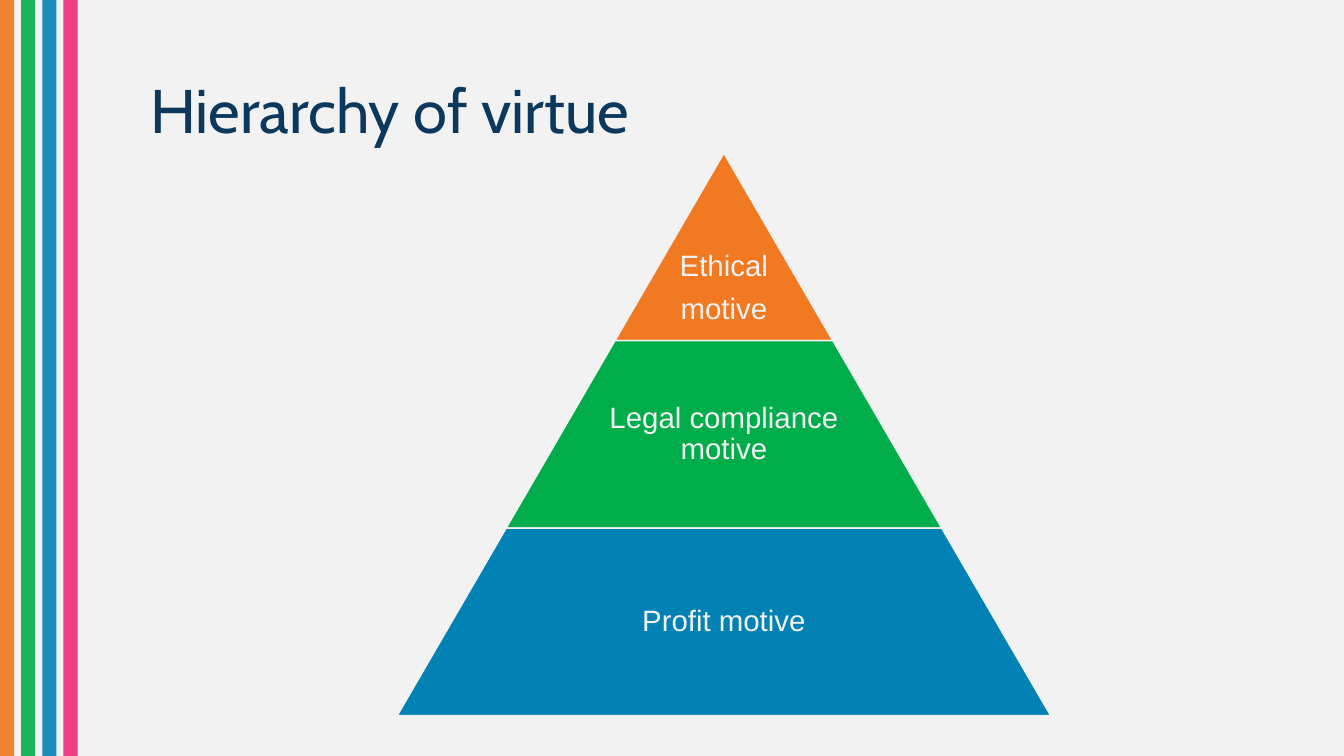
from lxml.etree import SubElement
from pptx import Presentation
from pptx.dml.color import RGBColor
from pptx.enum.shapes import MSO_SHAPE as SHAPE
from pptx.enum.text import MSO_ANCHOR as ANCHOR, MSO_AUTO_SIZE as AUTO, PP_ALIGN as ALIGN
from pptx.oxml.ns import qn
from pptx.util import Inches, Pt

TITLE = "Hierarchy of virtue"
ORANGE, GREEN, BLUE, PINK = "F07921", "01AD4B", "0281B4", "EE297B"
NAVY, PALE = "0D385E", "F2F2F2"
STRIPES = [ORANGE, GREEN, BLUE, PINK]
# paragraphs, fill, label width as share of the tier, anchor, bottom inset
TIERS = [
    (["Ethical", "motive"], ORANGE, 1, ANCHOR.BOTTOM, 0.15),
    (["Legal compliance motive"], GREEN, 0.65, ANCHOR.MIDDLE, 0.03),
    (["Profit motive"], BLUE, 0.65, ANCHOR.MIDDLE, 0.03),
]
WIDTH, HEIGHT = 13.33, 7.5
STRIPE_W, STRIPE_PITCH = 0.14, 0.21
APEX_X, APEX_Y = 7.18, 1.52
TIER_W, TIER_H = 2.16, 1.86  # each tier is one TIER_W wider than the one above
INSET = 0.03


def color(hex_string):
    return RGBColor.from_string(hex_string)


def box(x, y, w, h):
    return [Inches(v) for v in (x, y, w, h)]


def add_filled(kind, area, fill):
    s = slide.shapes.add_shape(kind, *area)
    s.shadow.inherit = False
    s.fill.solid()
    s.fill.fore_color.rgb = color(fill)
    return s


def add_stripe(i, fill):
    s = add_filled(SHAPE.RECTANGLE, box(i * STRIPE_PITCH, 0, STRIPE_W, HEIGHT), fill)
    s.line.fill.background()
    rgb = s.fill._xPr.find(".//" + qn("a:srgbClr"))
    SubElement(rgb, qn("a:alpha"), val="90000")


def add_tier(i, lines, fill, share, anchor, bottom):
    w, y = TIER_W * (i + 1), APEX_Y + TIER_H * i
    s = add_filled(SHAPE.TRAPEZOID, box(APEX_X - w / 2, y, w, TIER_H), fill)
    s.adjustments[0] = TIER_W / 2 / TIER_H
    s.line.color.rgb = color(PALE)
    s.line.width = Pt(1)

    label_w = w * share
    label = slide.shapes.add_textbox(*box(APEX_X - label_w / 2, y, label_w, TIER_H))
    tf = label.text_frame
    tf.word_wrap = True
    tf.vertical_anchor = anchor
    tf.margin_left = tf.margin_right = tf.margin_top = Inches(INSET)
    tf.margin_bottom = Inches(bottom)
    tf.text = "\n".join(lines)
    for p in tf.paragraphs:
        p.alignment = ALIGN.CENTER
        p.line_spacing = 0.9
        p.space_after = Pt(8)
        style(p, "Arial", 21, PALE)


def style(p, name, size, fill):
    p.font.name = name
    p.font.size = Pt(size)
    p.font.color.rgb = color(fill)


prs = Presentation()
prs.slide_width, prs.slide_height = Inches(WIDTH), Inches(HEIGHT)
slide = prs.slides.add_slide(prs.slide_layouts[5])
slide.background.fill.solid()
slide.background.fill.fore_color.rgb = color(PALE)

for i, fill in enumerate(STRIPES):
    add_stripe(i, fill)
for i, tier in enumerate(TIERS):
    add_tier(i, *tier)

title = slide.shapes.title
title.left, title.top, title.width, title.height = box(1.39, 0.4, 8.76, 1.45)
tf = title.text_frame
tf.text = TITLE
tf.auto_size = AUTO.NONE
tf.vertical_anchor = ANCHOR.MIDDLE
p = tf.paragraphs[0]
p.alignment = ALIGN.LEFT
p.line_spacing = 0.9
style(p, "Cabin", 44, NAVY)

prs.save("out.pptx")
